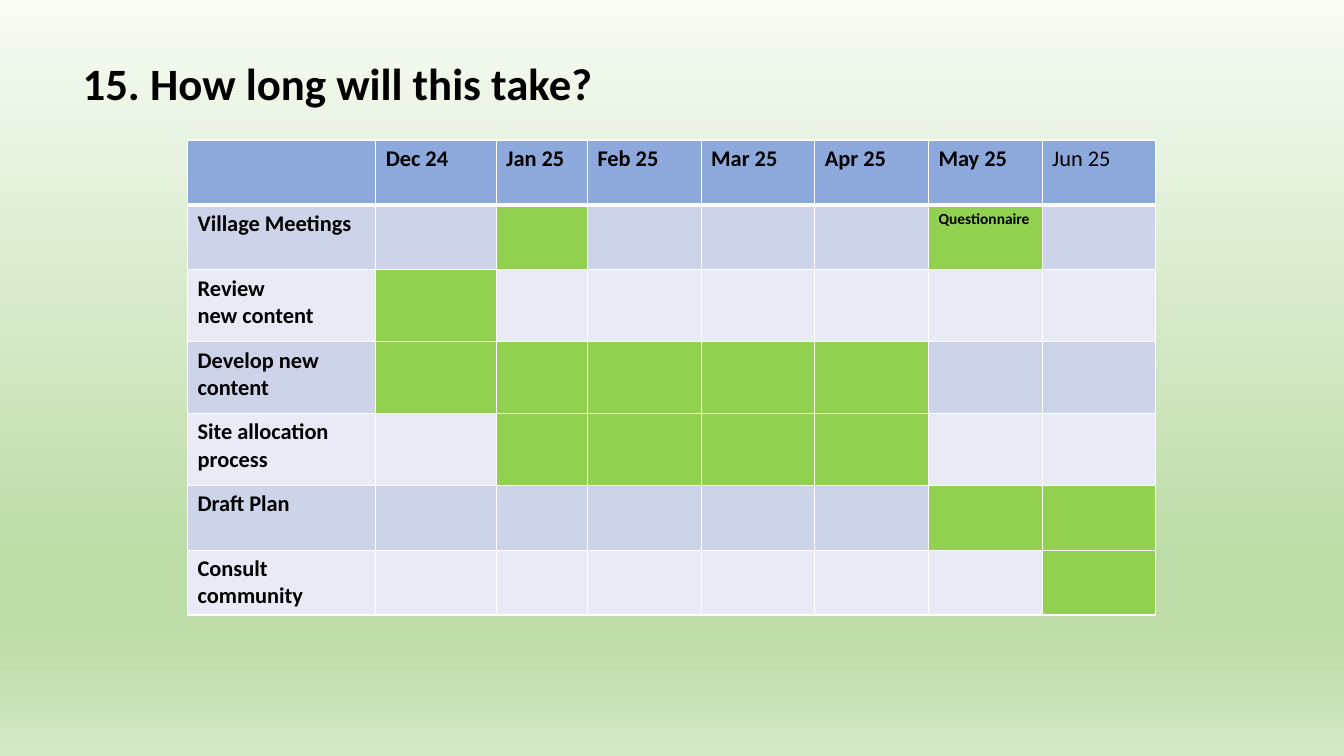
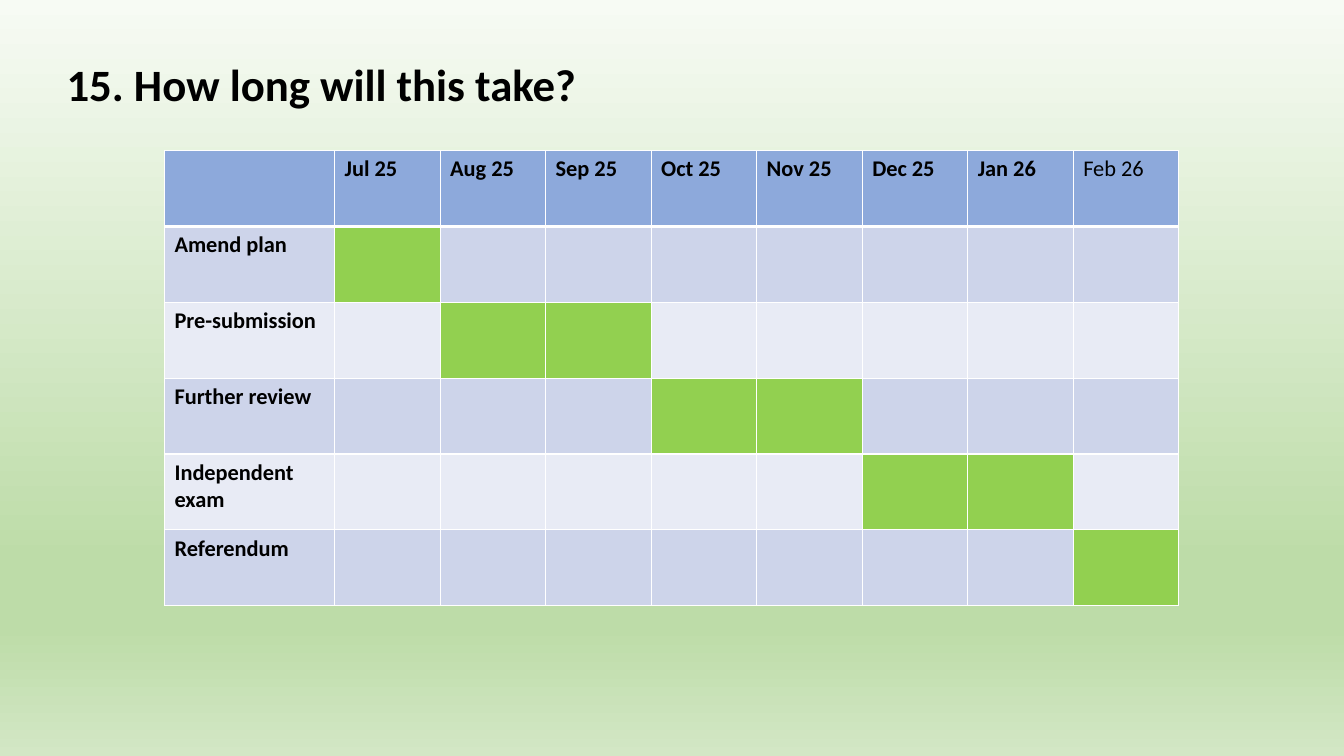
"""Build two project timeline slides, each with a month-by-month table."""
from lxml import etree
from pptx import Presentation
from pptx.dml.color import RGBColor
from pptx.enum.text import MSO_ANCHOR, PP_ALIGN
from pptx.oxml.ns import qn
from pptx.util import Pt

FONT = "Calibri"
BLACK = RGBColor(0x00, 0x00, 0x00)
WHITE = RGBColor(0xFF, 0xFF, 0xFF)
HEADER = RGBColor(0x8D, 0xA9, 0xDB)
BANDS = (RGBColor(0xE8, 0xEB, 0xF5), RGBColor(0xCD, 0xD4, 0xEA))
ACTIVE = RGBColor(0x92, 0xD0, 0x50)
MID_GREEN = RGBColor(0xBD, 0xDC, 0xA8)
BACKGROUND = (
    (0, RGBColor(0xF7, 0xFB, 0xF4)),
    (74, MID_GREEN),
    (83, MID_GREEN),
    (100, RGBColor(0xD3, 0xE7, 0xC5)),
)
TITLE = "15. How long will this take?"

TIMELINES = [
    {
        "title_box": (51.8, 36, 428.4, 46),
        "table_at": (134, 100),
        "widths": [134.4, 86, 65.3] + [81.2] * 5,
        "heights": [46.4] * 2 + [51.3] * 3 + [46.4] * 2,
        "months": ["Dec 24", "Jan 25", "Feb 25", "Mar 25", "Apr 25", "May 25", "Jun 25"],
        "tasks": [
            ("Village Meetings", ["Jan 25", "May 25"]),
            ("Review\nnew content", ["Dec 24"]),
            ("Develop new content", ["Dec 24", "Jan 25", "Feb 25", "Mar 25", "Apr 25"]),
            ("Site allocation process", ["Jan 25", "Feb 25", "Mar 25", "Apr 25"]),
            ("Draft Plan", ["May 25", "Jun 25"]),
            ("Consult community", ["Jun 25"]),
        ],
        "notes": {("Village Meetings", "May 25"): "Questionnaire"},
    },
    {
        "title_box": (40.3, 37, 381.6, 46),
        "table_at": (117.5, 107.5),
        "widths": [121.5] + [75.4] * 8,
        "heights": [54.2] * 6,
        "months": ["Jul 25", "Aug 25", "Sep 25", "Oct 25", "Nov 25", "Dec 25", "Jan 26", "Feb 26"],
        "tasks": [
            ("Amend plan", ["Jul 25"]),
            ("Pre-submission", ["Aug 25", "Sep 25"]),
            ("Further review", ["Oct 25", "Nov 25"]),
            ("Independent exam", ["Dec 25", "Jan 26"]),
            ("Referendum", ["Feb 26"]),
        ],
        "notes": {},
    },
]


def set_background(master):
    """Give the master a vertical four-stop gradient."""
    fill = master.background.fill
    fill.gradient()
    fill.gradient_angle = 270
    stops = master.element.find(".//" + qn("a:gsLst"))
    for old_stop in list(stops):
        stops.remove(old_stop)
    for percent, color in BACKGROUND:
        stop = etree.SubElement(stops, qn("a:gs"), pos=str(percent * 1000))
        etree.SubElement(stop, qn("a:srgbClr"), val=str(color))


def write(frame, text, size, bold=True):
    """Write each line of text as a paragraph of the frame."""
    for index, line in enumerate(text.split("\n")):
        para = frame.add_paragraph() if index else frame.paragraphs[0]
        para.alignment = PP_ALIGN.LEFT
        span = para.add_run()
        span.text = line
        span.font.name = FONT
        span.font.size = Pt(size)
        span.font.bold = bold
        span.font.color.rgb = BLACK


def add_title(slide, place):
    """Place the slide title."""
    title = slide.shapes.title
    title.left, title.top, title.width, title.height = (Pt(value) for value in place)
    title.text_frame.vertical_anchor = MSO_ANCHOR.TOP
    title.text_frame.word_wrap = True
    write(title.text_frame, TITLE, 32)


def style_cell(cell, color, top=1, bottom=1):
    """Draw white borders round a cell and fill it."""
    properties = cell._tc.get_or_add_tcPr()
    for side, width in (("L", 1), ("R", 1), ("T", top), ("B", bottom)):
        line = etree.SubElement(properties, qn(f"a:ln{side}"), w=str(Pt(width)))
        solid = etree.SubElement(line, qn("a:solidFill"))
        etree.SubElement(solid, qn("a:srgbClr"), val=str(WHITE))
    cell.fill.solid()
    cell.fill.fore_color.rgb = color


def add_timeline(slide, timeline):
    """Add the table with one row per task and one column per month."""
    months, widths, heights = timeline["months"], timeline["widths"], timeline["heights"]
    sizes = (*timeline["table_at"], sum(widths), sum(heights))
    table = slide.shapes.add_table(len(heights), len(widths), *(Pt(value) for value in sizes)).table
    for column, width in zip(table.columns, widths):
        column.width = Pt(width)
    for row, height in zip(table.rows, heights):
        row.height = Pt(height)

    style_cell(table.cell(0, 0), HEADER, bottom=3)
    for column, month in enumerate(months, 1):
        cell = table.cell(0, column)
        style_cell(cell, HEADER, bottom=3)
        write(cell.text_frame, month, 16, bold=month != months[-1])

    for row, (task, active) in enumerate(timeline["tasks"], 1):
        top = 3 if row == 1 else 1
        band = BANDS[row % 2]
        style_cell(table.cell(row, 0), band, top)
        write(table.cell(row, 0).text_frame, task, 16)
        for column, month in enumerate(months, 1):
            cell = table.cell(row, column)
            style_cell(cell, ACTIVE if month in active else band, top)
            if (task, month) in timeline["notes"]:
                write(cell.text_frame, timeline["notes"][task, month], 11)


def main():
    """Build and save the deck."""
    deck = Presentation()
    deck.slide_width, deck.slide_height = Pt(960), Pt(540)
    set_background(deck.slide_master)
    title_only = deck.slide_layouts[5]
    for timeline in TIMELINES:
        slide = deck.slides.add_slide(title_only)
        add_title(slide, timeline["title_box"])
        add_timeline(slide, timeline)
    deck.save("out.pptx")


if __name__ == "__main__":
    main()
